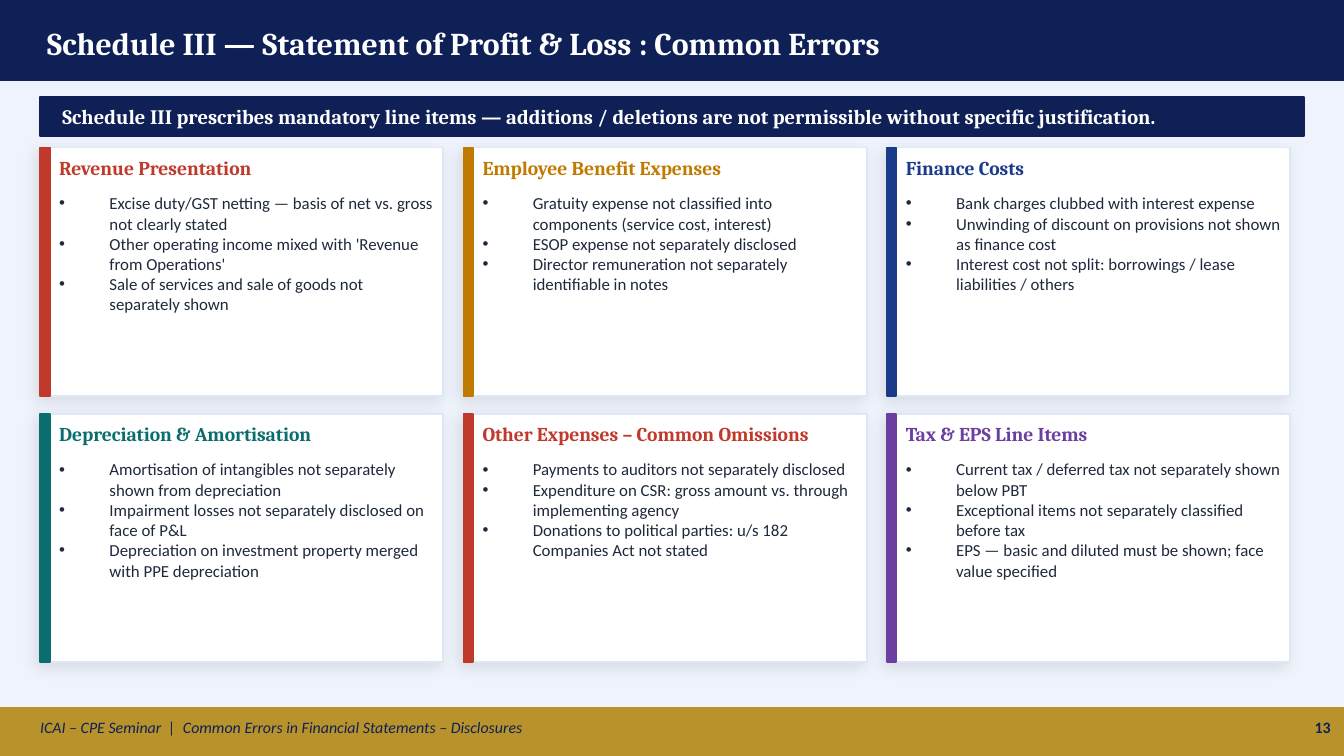
from lxml import etree
from pptx import Presentation
from pptx.dml.color import RGBColor
from pptx.enum.shapes import MSO_SHAPE
from pptx.enum.text import MSO_ANCHOR, MSO_AUTO_SIZE, PP_ALIGN
from pptx.oxml.ns import qn
from pptx.util import Cm, Pt

RECTANGLE = MSO_SHAPE.RECTANGLE
TOP, MIDDLE = MSO_ANCHOR.TOP, MSO_ANCHOR.MIDDLE
LEFT, RIGHT = PP_ALIGN.LEFT, PP_ALIGN.RIGHT
NO_FIT = MSO_AUTO_SIZE.NONE

SLIDE_W, SLIDE_H = 25.4, 14.29
NAVY, GOLD, PALE, WHITE = "0F2056", "B8922A", "EFF3FB", "FFFFFF"
INK, CARD_EDGE = "1E293B", "DEE7F5"
RED, AMBER, BLUE, TEAL, PURPLE = "C0392B", "C07A00", "1A3A8A", "0A6E6E", "6B3FA0"
HEADING_FONT, BODY_FONT = "Cambria", "Calibri"

# Card grid, in centimetres
COLUMNS = 3
GRID_LEFT, GRID_TOP = 0.76, 2.79
CARD_W, CARD_H = 7.62, 4.7
COLUMN_STEP, ROW_STEP = 8, 5.03
STRIPE_W, TEXT_INSET, TEXT_W = 0.18, 0.36, 7.11

CARDS = [
    ("Revenue Presentation", RED, [
        "Excise duty/GST netting — basis of net vs. gross not clearly stated",
        "Other operating income mixed with 'Revenue from Operations'",
        "Sale of services and sale of goods not separately shown"]),
    ("Employee Benefit Expenses", AMBER, [
        "Gratuity expense not classified into components (service cost, interest)",
        "ESOP expense not separately disclosed",
        "Director remuneration not separately identifiable in notes"]),
    ("Finance Costs", BLUE, [
        "Bank charges clubbed with interest expense",
        "Unwinding of discount on provisions not shown as finance cost",
        "Interest cost not split: borrowings / lease liabilities / others"]),
    ("Depreciation & Amortisation", TEAL, [
        "Amortisation of intangibles not separately shown from depreciation",
        "Impairment losses not separately disclosed on face of P&L",
        "Depreciation on investment property merged with PPE depreciation"]),
    ("Other Expenses – Common Omissions", RED, [
        "Payments to auditors not separately disclosed",
        "Expenditure on CSR: gross amount vs. through implementing agency",
        "Donations to political parties: u/s 182 Companies Act not stated"]),
    ("Tax & EPS Line Items", PURPLE, [
        "Current tax / deferred tax not separately shown below PBT",
        "Exceptional items not separately classified before tax",
        "EPS — basic and diluted must be shown; face value specified"]),
]


def color(hex_code):
    return RGBColor.from_string(hex_code)


class SlideBuilder:
    def __init__(self, slide):
        self.slide = slide

    def block(self, left, top, width, height, fill, edge=None):
        block = self.slide.shapes.add_shape(
            RECTANGLE, Cm(left), Cm(top), Cm(width), Cm(height))
        block.shadow.inherit = False
        block.fill.solid()
        block.fill.fore_color.rgb = color(fill)
        block.line.color.rgb = color(edge or fill)
        block.line.width = Pt(1)
        return block

    def soft_shadow(self, block):
        effects = block._element.spPr.find(qn("a:effectLst"))
        shadow = etree.SubElement(
            effects, qn("a:outerShdw"), blurRad=str(Pt(8)), dist=str(Pt(3)),
            dir=str(135 * 60000), algn="bl", rotWithShape="0")
        tint = etree.SubElement(shadow, qn("a:srgbClr"), val="000000")
        etree.SubElement(tint, qn("a:alpha"), val="10000")

    def format_frame(self, frame, anchor):
        frame.word_wrap = True
        frame.auto_size = NO_FIT
        frame.vertical_anchor = anchor
        frame.margin_left = frame.margin_right = 0
        frame.margin_top = frame.margin_bottom = 0

    def format_font(self, paragraph, size, ink, face, bold=False, italic=False):
        for run in paragraph.runs:
            run.font.size = Pt(size)
            run.font.name = face
            run.font.color.rgb = color(ink)
            run.font.bold = bold
            run.font.italic = italic

    def title(self, left, top, width, height, words):
        title = self.slide.shapes.title
        title.left, title.top = Cm(left), Cm(top)
        title.width, title.height = Cm(width), Cm(height)
        title.text_frame.text = words
        self.format_frame(title.text_frame, MIDDLE)
        paragraph = title.text_frame.paragraphs[0]
        paragraph.alignment = LEFT
        self.format_font(paragraph, 17, WHITE, HEADING_FONT, bold=True)
        # Bring the title in front of the header band
        title._element.getparent().append(title._element)

    def text(self, left, top, width, height, words, size, ink, face,
             anchor=MIDDLE, align=LEFT, bold=False, italic=False):
        frame = self.slide.shapes.add_textbox(
            Cm(left), Cm(top), Cm(width), Cm(height)).text_frame
        frame.text = words
        self.format_frame(frame, anchor)
        for paragraph in frame.paragraphs:
            paragraph.alignment = align
            self.format_font(paragraph, size, ink, face, bold, italic)
        return frame

    def bullets(self, left, top, width, height, points):
        frame = self.text(left, top, width, height, "\n".join(points),
                          9, INK, BODY_FONT, anchor=TOP)
        for paragraph in frame.paragraphs:
            properties = paragraph._p.get_or_add_pPr()
            properties.set("marL", str(Cm(0.95)))
            properties.set("indent", str(-Cm(0.95)))
            etree.SubElement(properties, qn("a:buFont"), typeface="Arial")
            etree.SubElement(properties, qn("a:buChar"), char="•")

    def card(self, left, top, heading, accent, points):
        panel = self.block(left, top, CARD_W, CARD_H, WHITE, CARD_EDGE)
        self.soft_shadow(panel)
        self.block(left, top, STRIPE_W, CARD_H, accent)
        text_left = left + TEXT_INSET
        self.text(text_left, top + 0.15, TEXT_W, 0.66, heading, 10.5, accent,
                  HEADING_FONT, anchor=TOP, bold=True)
        self.bullets(text_left, top + 0.86, TEXT_W, 3.63, points)


def main():
    deck = Presentation()
    deck.slide_width, deck.slide_height = Cm(SLIDE_W), Cm(SLIDE_H)
    title_only = deck.slide_layouts[5]
    builder = SlideBuilder(deck.slides.add_slide(title_only))

    # Background, header and footer bands
    builder.block(0, 0, SLIDE_W, SLIDE_H, PALE)
    builder.block(0, 0, SLIDE_W, 1.52, NAVY)
    builder.block(0, 13.39, SLIDE_W, 0.9, GOLD)
    builder.title(0.89, 0.2, 23.62, 1.2,
                  "Schedule III — Statement of Profit & Loss : Common Errors")

    # Key message
    builder.block(GRID_LEFT, 1.83, 23.88, 0.74, NAVY)
    builder.text(1.18, 1.83, 23.3, 0.74,
                 "Schedule III prescribes mandatory line items — additions / "
                 "deletions are not permissible without specific justification.",
                 11, WHITE, HEADING_FONT, bold=True)

    # Error cards
    for index, (heading, accent, points) in enumerate(CARDS):
        row, column = divmod(index, COLUMNS)
        builder.card(GRID_LEFT + column * COLUMN_STEP, GRID_TOP + row * ROW_STEP,
                     heading, accent, points)

    # Footer text
    builder.text(GRID_LEFT, 13.41, 22.35, 0.69,
                 "ICAI – CPE Seminar  |  Common Errors in Financial Statements – Disclosures",
                 8.5, NAVY, BODY_FONT, italic=True)
    builder.text(24.13, 13.41, 1.02, 0.69, "13", 8.5, NAVY, BODY_FONT,
                 align=RIGHT, bold=True)

    deck.save("out.pptx")


if __name__ == "__main__":
    main()
